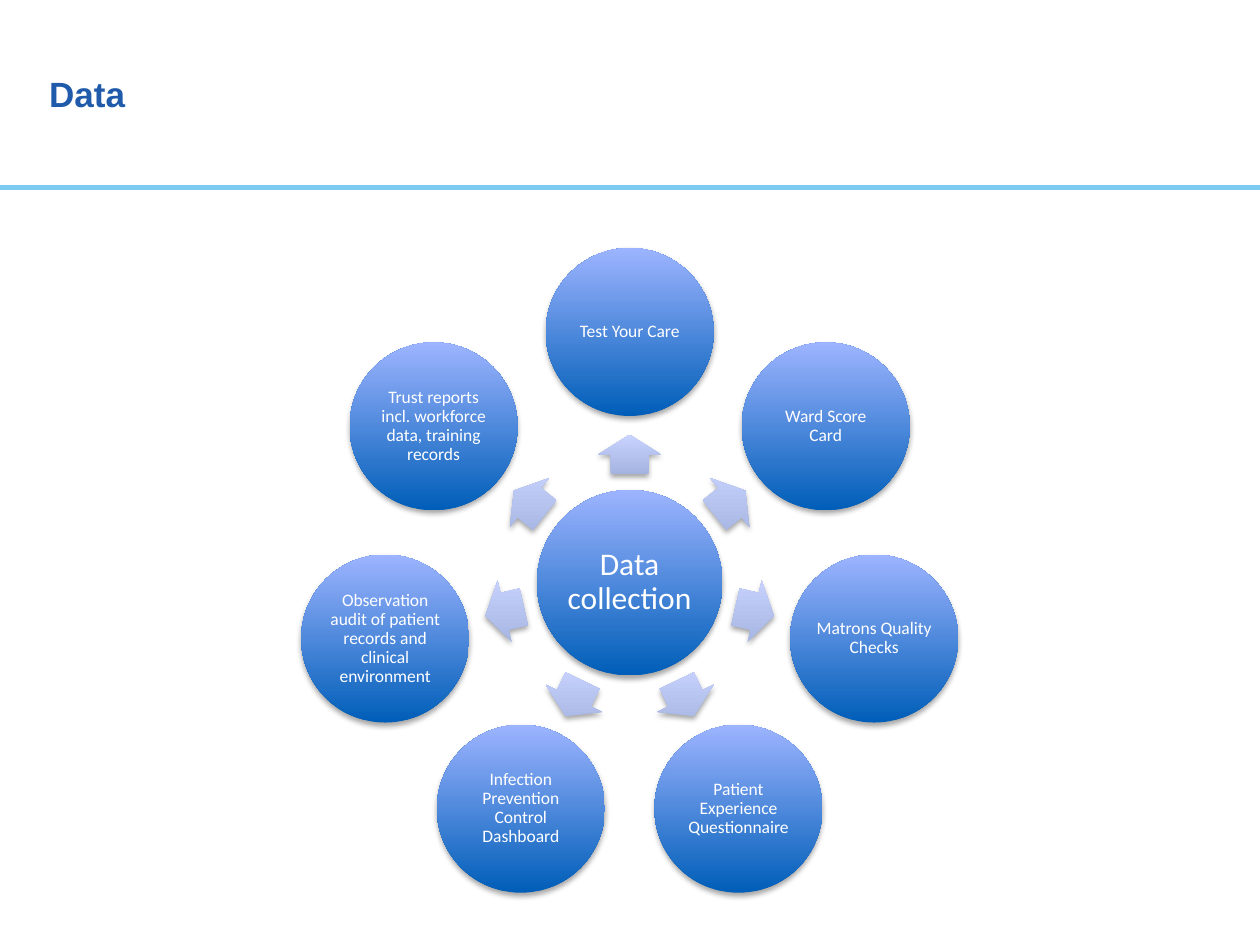
from math import cos, radians, sin

from lxml.etree import SubElement
from pptx import Presentation
from pptx.dml.color import RGBColor
from pptx.enum.shapes import MSO_CONNECTOR, MSO_SHAPE
from pptx.enum.text import MSO_ANCHOR, PP_ALIGN
from pptx.oxml.ns import qn
from pptx.util import Pt

COLORS = {
    "title": "1F5BAA",
    "rule": "7ECBF1",
    "circle_dark": "005EB8",
    "circle_light": "9DB4FF",
    "arrow_dark": "A4B3DF",
    "arrow_light": "C8D4FF",
    "text": "FFFFFF",
    "shadow": "000000",
}

SOURCES = [
    "Test Your Care",
    "Ward Score Card",
    "Matrons Quality Checks",
    "Patient Experience Questionnaire",
    "Infection Prevention Control Dashboard",
    "Observation audit of patient records and clinical environment",
    "Trust reports incl. workforce data, training records",
]

CENTER_X, CENTER_Y = 359.8, 333
HUB_SIZE, SOURCE_SIZE = 106, 96
ARROW_LENGTH, ARROW_WIDTH = 22.5, 36
SOURCE_RADIUS, ARROW_RADIUS = 143.3, 73.3


def color(name):
    return RGBColor.from_string(COLORS[name])


class SlideBuilder:
    """Holds the style and the current slide."""

    def __init__(self, page):
        self.page = page
        self.diagram = None

    def title(self, text, left, top, width, height):
        box = self.page.shapes.add_textbox(Pt(left), Pt(top), Pt(width), Pt(height))
        box.text_frame.word_wrap = True
        paragraph = box.text_frame.paragraphs[0]
        paragraph.text = text
        self.set_font(paragraph, "Arial", 20, "title", bold=True)

    def rule(self, y, width):
        line = self.page.shapes.add_connector(
            MSO_CONNECTOR.STRAIGHT, Pt(0), Pt(y), Pt(width), Pt(y))
        line.line.color.rgb = color("rule")
        line.line.width = Pt(3)
        SubElement(line._element.spPr, qn("a:effectLst"))

    def start_diagram(self):
        self.diagram = self.page.shapes.add_group_shape()

    def circle(self, text, x, y, diameter, size, inset):
        shape = self.diagram_shape(MSO_SHAPE.OVAL, x, y, diameter, diameter, "circle")
        frame = shape.text_frame
        frame.word_wrap = True
        frame.vertical_anchor = MSO_ANCHOR.MIDDLE
        frame.margin_left = frame.margin_right = Pt(inset)
        frame.margin_top = frame.margin_bottom = Pt(inset)
        paragraph = frame.paragraphs[0]
        paragraph.text = text
        paragraph.alignment = PP_ALIGN.CENTER
        paragraph.line_spacing = 0.9
        paragraph.space_after = Pt(0.35 * size)
        self.set_font(paragraph, "Calibri", size, "text")

    def arrow(self, x, y, angle):
        shape = self.diagram_shape(
            MSO_SHAPE.RIGHT_ARROW, x, y, ARROW_LENGTH, ARROW_WIDTH, "arrow")
        shape.adjustments[0] = 0.6
        shape.adjustments[1] = 0.5
        shape.rotation = angle % 360

    def diagram_shape(self, kind, x, y, width, height, style):
        """Add a shaded, shadowed shape centred on x, y."""
        shape = self.diagram.shapes.add_shape(
            kind, Pt(x - width / 2), Pt(y - height / 2), Pt(width), Pt(height))
        shape.line.fill.background()
        # Vertical shading that stays upright when the shape turns
        shape.fill.gradient()
        shape.fill.gradient_angle = 90
        for stop, shade in zip(shape.fill.gradient_stops, ("dark", "light")):
            stop.color.rgb = color(f"{style}_{shade}")
        shape._element.spPr.find(qn("a:gradFill")).set("rotWithShape", "0")
        # Soft shadow below
        shape.shadow.inherit = False
        effects = shape._element.spPr.find(qn("a:effectLst"))
        shadow = SubElement(
            effects, qn("a:outerShdw"), blurRad=str(Pt(3.1)), dist=str(Pt(1.8)),
            dir="5400000", rotWithShape="0")
        tint = SubElement(shadow, qn("a:srgbClr"), val=COLORS["shadow"])
        SubElement(tint, qn("a:alpha"), val="35000")
        return shape

    def set_font(self, paragraph, name, size, color_name, bold=False):
        paragraph.font.name = name
        paragraph.font.size = Pt(size)
        paragraph.font.bold = bold
        paragraph.font.color.rgb = color(color_name)


def main():
    deck = Presentation()
    deck.slide_width, deck.slide_height = Pt(720), Pt(540)
    builder = SlideBuilder(deck.slides.add_slide(deck.slide_layouts[6]))

    # Header
    builder.rule(107, 720)
    builder.title("Data", 21, 38, 648, 51)

    # Hub
    builder.start_diagram()
    builder.circle("Data collection", CENTER_X, CENTER_Y, HUB_SIZE, 18, 1.8)

    # Data sources, clockwise from the top, each with its arrow
    for index, source in enumerate(SOURCES):
        angle = index * 360 / len(SOURCES) - 90
        dx, dy = cos(radians(angle)), sin(radians(angle))
        builder.arrow(CENTER_X + ARROW_RADIUS * dx, CENTER_Y + ARROW_RADIUS * dy, angle)
        builder.circle(source, CENTER_X + SOURCE_RADIUS * dx,
                       CENTER_Y + SOURCE_RADIUS * dy, SOURCE_SIZE, 10, 1)

    deck.save("out.pptx")


if __name__ == "__main__":
    main()
